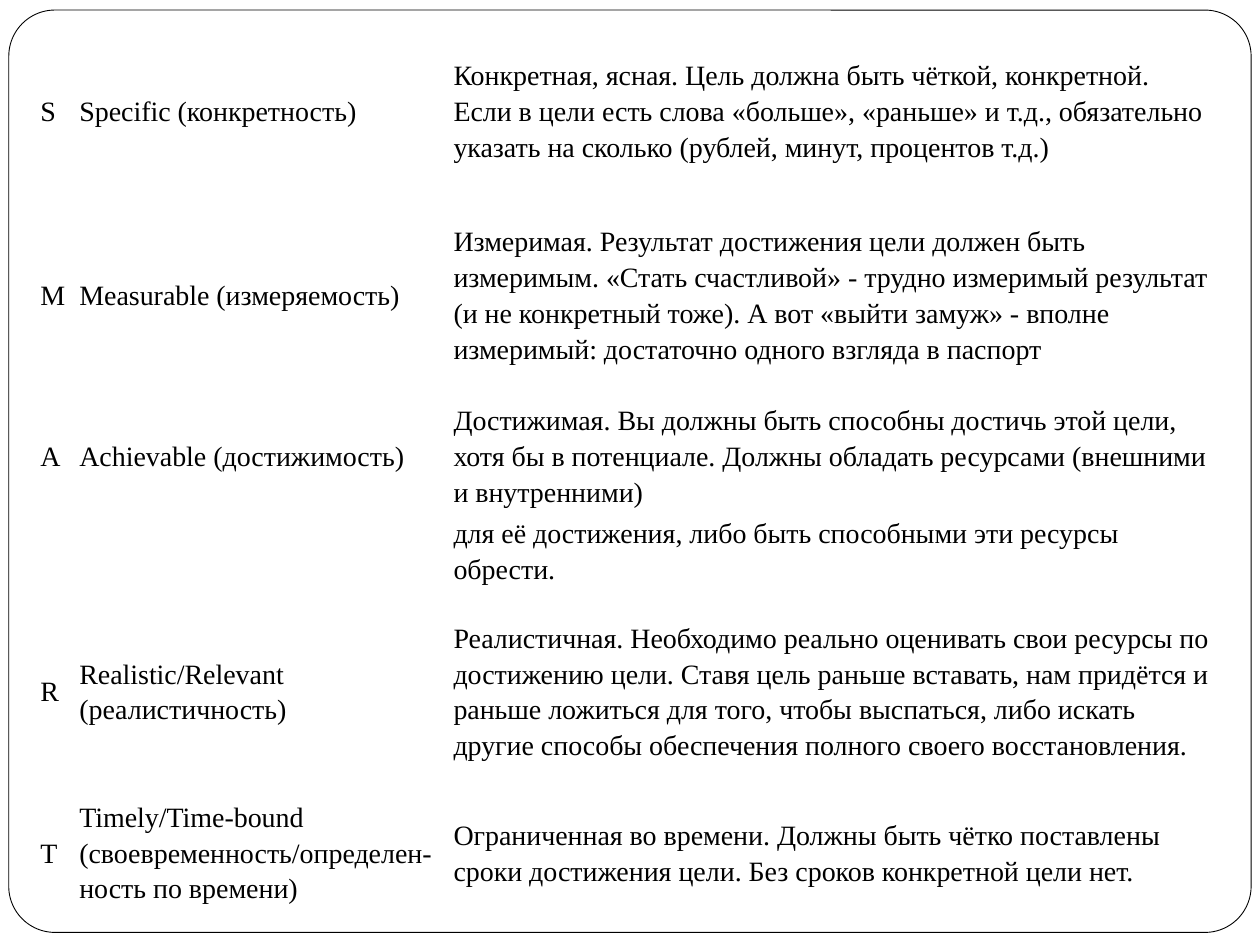
import pptx
import pptx.util
import pptx.dml.color
import pptx.enum.shapes
import pptx.enum.text

Inches, Pt = pptx.util.Inches, pptx.util.Pt
RGB = pptx.dml.color.RGBColor.from_string

# Content: letter, criterion, explanation
CRITERIA = [
    ("S", "Specific (конкретность)",
     "Конкретная, ясная. Цель должна быть чёткой, конкретной. Если в цели есть слова "
     "«больше», «раньше» и т.д., обязательно указать на сколько (рублей, минут, процентов т.д.)"),
    ("M", "Measurable (измеряемость)",
     "Измеримая. Результат достижения цели должен быть измеримым. «Стать счастливой» - "
     "трудно измеримый результат (и не конкретный тоже). А вот «выйти замуж» - вполне "
     "измеримый: достаточно одного взгляда в паспорт"),
    ("A", "Achievable (достижимость)",
     "Достижимая. Вы должны быть способны достичь этой цели, хотя бы в потенциале. "
     "Должны обладать ресурсами (внешними и внутренними)"),
    ("", "", "для её достижения, либо быть способными эти ресурсы обрести."),
    ("R", "Realistic/Relevant (реалистичность)",
     "Реалистичная. Необходимо реально оценивать свои ресурсы по достижению цели. Ставя "
     "цель раньше вставать, нам придётся и раньше ложиться для того, чтобы выспаться, либо "
     "искать другие способы обеспечения полного своего восстановления."),
    ("T", "Timely/Time-bound (своевременность/определен-ность по времени)",
     "Ограниченная во времени. Должны быть чётко поставлены сроки достижения цели. "
     "Без сроков конкретной цели нет."),
]
COLORS = {"paper": "FFFFFF", "ink": "000000"}
FONT = "Times New Roman"
COLUMN_WIDTHS = [0.31, 2.97, 6.02]
ROW_HEIGHTS = [1.28, 1.64, 0.92, 0.56, 1.64, 0.92]
CELL_INSET = Inches(0.01)


def write_cell(cell, text):
    cell.fill.background()
    cell.vertical_anchor = pptx.enum.text.MSO_ANCHOR.MIDDLE
    cell.margin_left = cell.margin_right = CELL_INSET
    cell.margin_top = cell.margin_bottom = CELL_INSET
    cell.text_frame.text = text
    paragraph = cell.text_frame.paragraphs[0]
    paragraph.line_spacing = 1.15
    paragraph.font.size = Pt(16)
    for run in paragraph.runs:
        run.font.size = Pt(16)
        run.font.name = FONT
        run.font.color.rgb = RGB(COLORS["ink"])


def main():
    deck = pptx.Presentation()
    deck.slide_width, deck.slide_height = Inches(10), Inches(7.5)
    slide = deck.slides.add_slide(deck.slide_layouts[6])

    # Rounded frame
    frame = slide.shapes.add_shape(
        pptx.enum.shapes.MSO_SHAPE.ROUNDED_RECTANGLE,
        Inches(0.07), Inches(0.08), Inches(9.86), Inches(7.32))
    frame.adjustments[0] = 0.05
    frame.shadow.inherit = False
    frame.fill.solid()
    frame.fill.fore_color.rgb = RGB(COLORS["paper"])
    frame.line.color.rgb = RGB(COLORS["ink"])
    frame.line.width = Pt(0.5)

    # SMART criteria table
    criteria = slide.shapes.add_table(
        len(CRITERIA), len(COLUMN_WIDTHS), Inches(0.31), Inches(0.23),
        Inches(sum(COLUMN_WIDTHS)), Inches(7.05)).table
    criteria.first_row = criteria.horz_banding = False
    for column, width in zip(criteria.columns, COLUMN_WIDTHS):
        column.width = Inches(width)
    for row, height, texts in zip(criteria.rows, ROW_HEIGHTS, CRITERIA):
        row.height = Inches(height)
        for cell, text in zip(row.cells, texts):
            write_cell(cell, text)

    deck.save("out.pptx")


if __name__ == "__main__":
    main()
